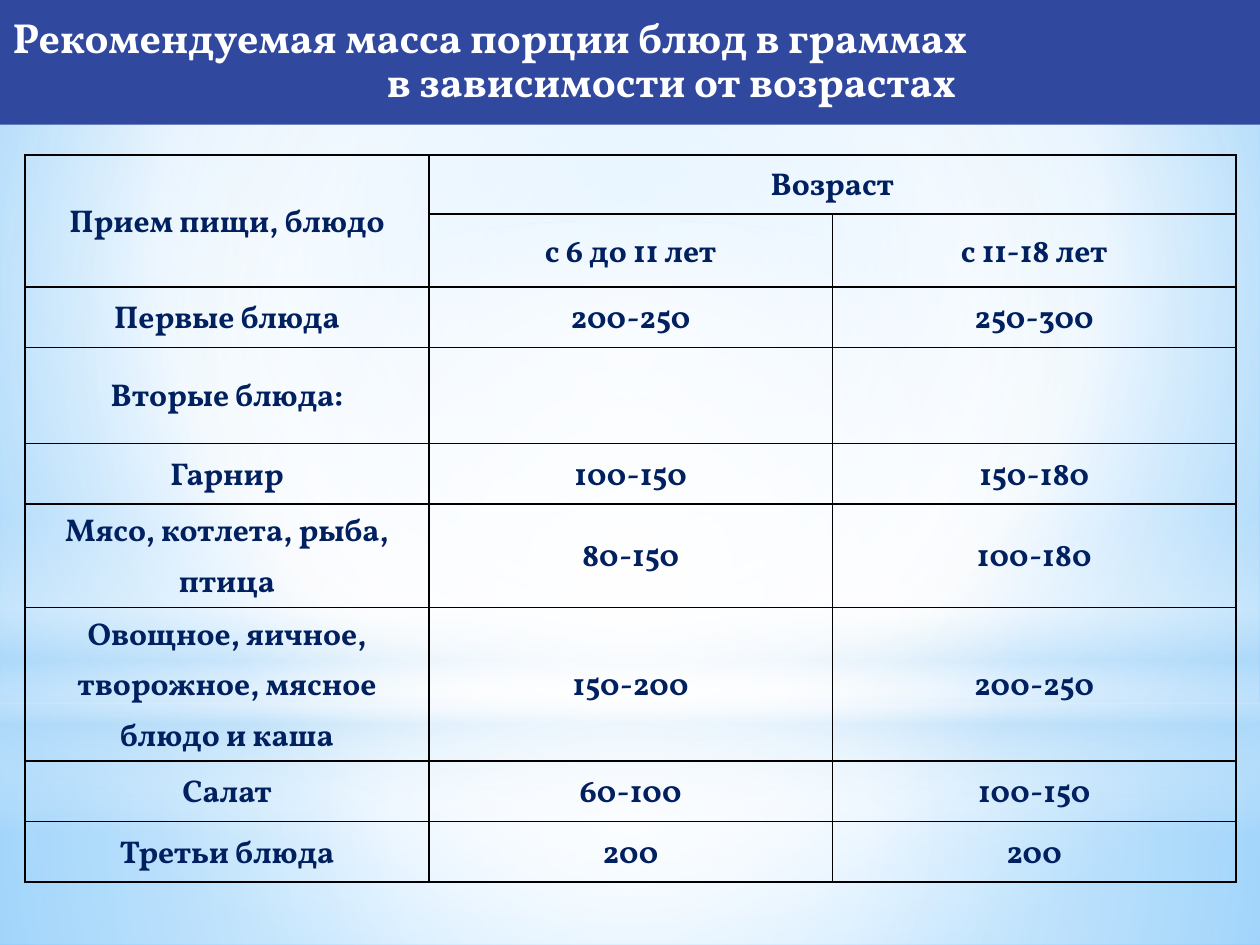
from lxml import etree
from pptx import Presentation, util as u
from pptx.dml.color import RGBColor
from pptx.enum import shapes, text
from pptx.oxml.ns import qn

HUE = dict(band="31489F", ink="002060", line="000000", white="FFFFFF",
           pale="B4DCFA", sky="9ED5FF", deep="5BB9FF")
FONT = "Vollkorn"


def put(frame, words, size, hue, align, **gaps):
    """Write each line as a bold paragraph; gaps are paragraph settings."""
    for i, line in enumerate(words.split("\n")):
        para = frame.paragraphs[0] if i == 0 else frame.add_paragraph()
        para.alignment = align
        for key, val in gaps.items():
            setattr(para, key, val)
        para.font.size, para.font.bold, para.font.name = u.Pt(size), True, FONT
        para.font.color.rgb = RGBColor.from_string(HUE[hue])
        para.add_run().text = line


def shade(fill, stops, rect=None):
    """Gradient of (place, hue, opacity): radial around rect, else downward."""
    fill.gradient()
    grad = fill._xPr.find(qn("a:gradFill"))
    for old in list(grad):
        grad.remove(old)
    row = etree.SubElement(grad, qn("a:gsLst"))
    for pos, hue, alpha in stops:
        stop = etree.SubElement(row, qn("a:gs"), pos=str(pos * 1000))
        tint = etree.SubElement(stop, qn("a:srgbClr"), val=HUE[hue])
        etree.SubElement(tint, qn("a:alpha"), val=str(alpha * 1000))
    if rect:
        ring = etree.SubElement(grad, qn("a:path"), path="circle")
        etree.SubElement(ring, qn("a:fillToRect"),
                         {k: str(v * 1000) for k, v in zip("ltrb", rect)})
    else:
        etree.SubElement(grad, qn("a:lin"), ang="5400000", scaled="0")


deck = Presentation()
deck.slide_width, deck.slide_height = u.Inches(10), u.Inches(7.5)
wide = deck.slide_width
page = deck.slides.add_slide(deck.slide_layouts[5])

# Background and its soft light layers: shape, top, height, stops, centre
shade(page.background.fill,
      [(0, "sky", 100), (60, "white", 100), (100, "deep", 100)], (20, 10, 20, 60))
box, oval = shapes.MSO_SHAPE.RECTANGLE, shapes.MSO_SHAPE.OVAL
mid = (50, 50, 50, 50)
glows = [
    (box, 5.58, 1.92, [(0, "white", 91), (37, "white", 76), (100, "pale", 79)], mid),
    (box, 0, 5.58, [(0, "white", 89), (48, "white", 62), (100, "pale", 79)], mid),
    (box, 4.12, 2.5, [(0, "white", 0), (29, "white", 30), (45, "pale", 40),
                      (55, "white", 26), (65, "pale", 60), (100, "white", 0)], None),
    (oval, 1.75, 5.58, [(0, "white", 100), (56, "white", 0)], mid),
]
for kind, top, tall, stops, rect in glows:
    glow = page.shapes.add_shape(kind, 0, u.Inches(top), wide, u.Inches(tall))
    glow.shadow.inherit = False
    glow.line.fill.background()
    shade(glow.fill, stops, rect)

# Table of portions
rows = [
    ("Прием пищи, блюдо", "Возраст", ""),
    ("", "с 6 до 11 лет", "с 11-18 лет"),
    ("Первые блюда", "200-250", "250-300"),
    ("Вторые блюда:", "", ""),
    ("Гарнир", "100-150", "150-180"),
    ("Мясо, котлета, рыба, птица", "80-150", "100-180"),
    ("Овощное, яичное, творожное, мясное блюдо и каша", "150-200", "200-250"),
    ("Салат", "60-100", "100-150"),
    ("Третьи блюда", "200", "200"),
]
talls = [0.47, 0.58, 0.48, 0.76, 0.48, 0.82, 1.21, 0.48, 0.48]
grid = page.shapes.add_table(len(rows), 3, u.Inches(0.2), u.Inches(1.23),
                             u.Inches(9.61), u.Inches(sum(talls))).table
grid.first_row = grid.horz_banding = False
for row, tall in zip(grid.rows, talls):
    row.height = u.Inches(tall)
grid.cell(0, 0).merge(grid.cell(1, 0))
grid.cell(0, 1).merge(grid.cell(0, 2))

for r, row in enumerate(rows):
    for c, words in enumerate(row):
        cell = grid.cell(r, c)
        cell.vertical_anchor = text.MSO_ANCHOR.MIDDLE
        cell.margin_left = cell.margin_right = u.Inches(0.01)
        cell.margin_top = cell.margin_bottom = u.Inches(0.01)
        if words:
            put(cell.text_frame, words, 18, "ink", text.PP_ALIGN.CENTER,
                line_spacing=1.15, space_after=u.Pt(1))
        # Borders come before the fill in the cell properties
        props = cell._tc.get_or_add_tcPr()
        for side in ("lnL", "lnR", "lnT", "lnB"):
            edge = etree.SubElement(props, qn("a:" + side), w=str(u.Pt(1)))
            paint = etree.SubElement(edge, qn("a:solidFill"))
            etree.SubElement(paint, qn("a:srgbClr"), val=HUE["line"])
        cell.fill.background()

# Title band, in front of the light layers
head = page.shapes.title
page.shapes._spTree.append(head._element)
head.left, head.top, head.width, head.height = 0, 0, wide, u.Inches(0.99)
head.fill.solid()
head.fill.fore_color.rgb = RGBColor.from_string(HUE["band"])
frame = head.text_frame
frame.word_wrap, frame.auto_size = True, text.MSO_AUTO_SIZE.NONE
frame.vertical_anchor = text.MSO_ANCHOR.MIDDLE
put(frame, "Рекомендуемая масса порции блюд в граммах\nв зависимости от возрастах",
    24, "white", text.PP_ALIGN.LEFT, line_spacing=0.87)
frame.paragraphs[1]._p.get_or_add_pPr().set("marL", str(u.Inches(2.97)))

deck.save("out.pptx")
